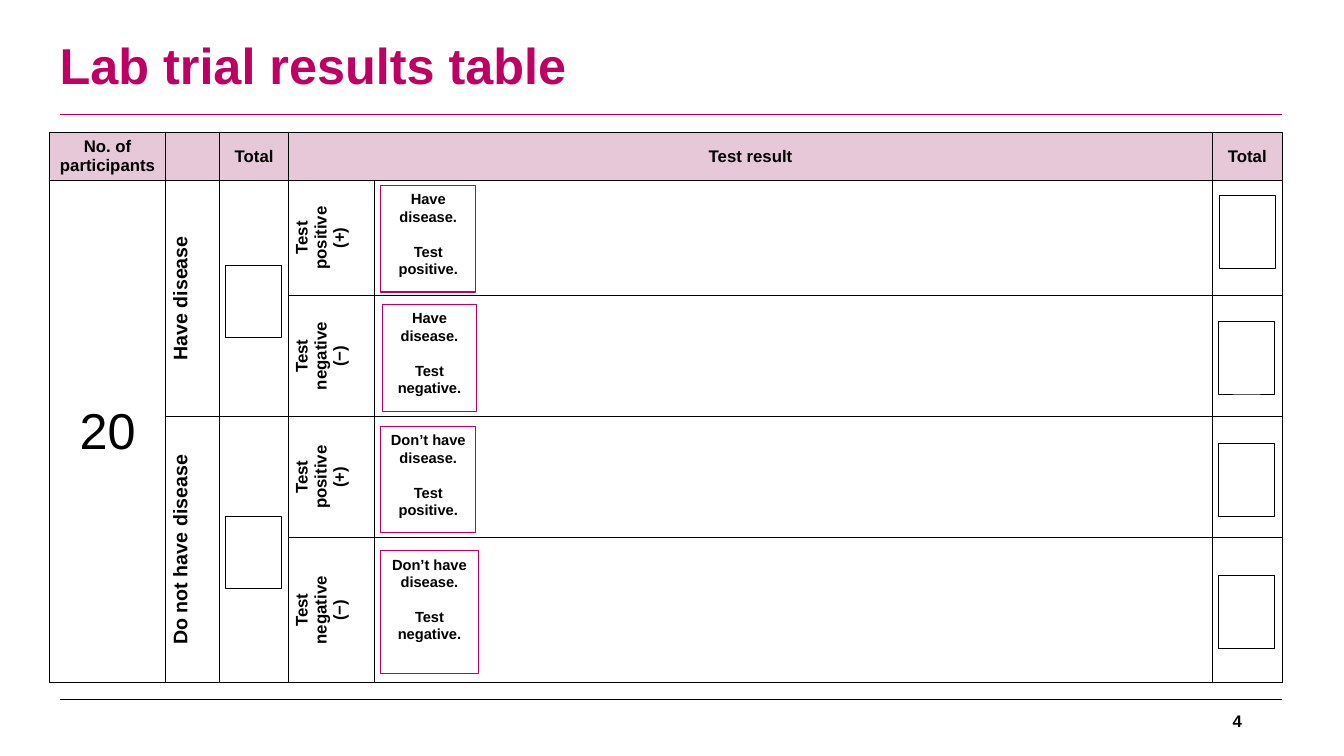
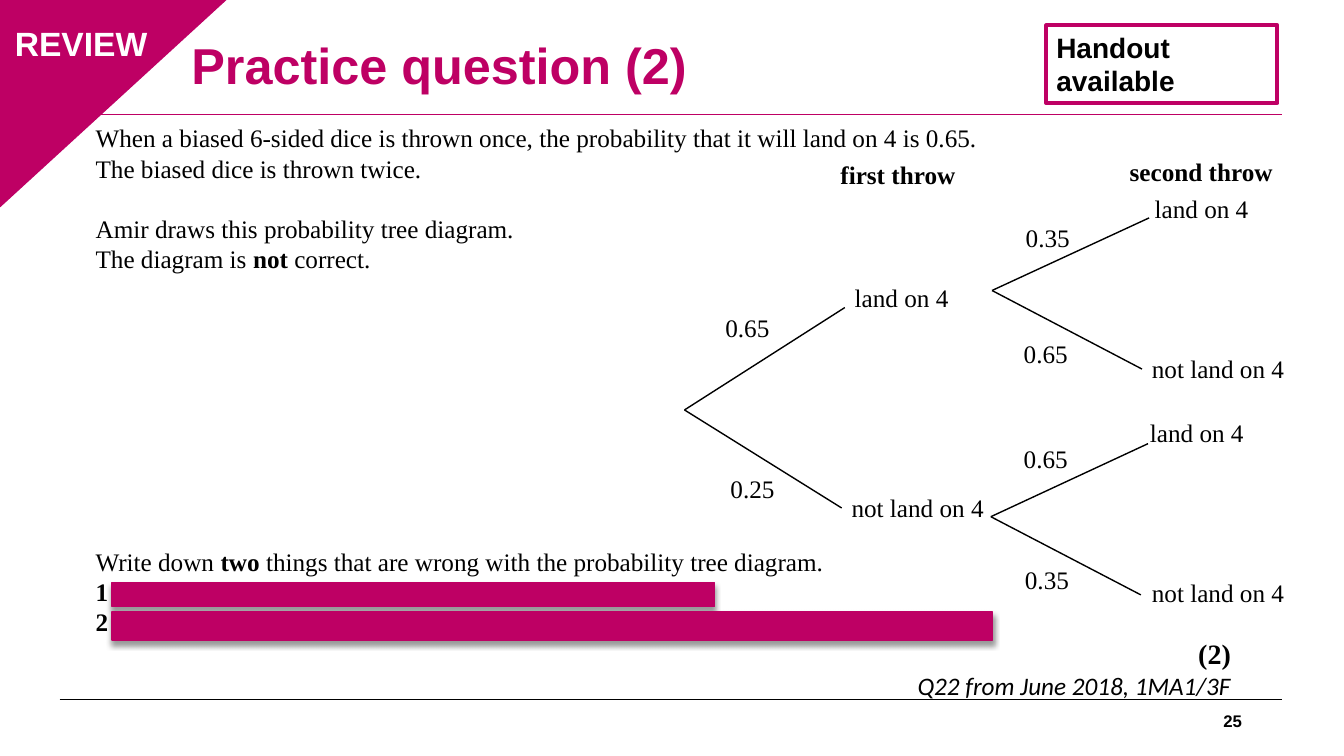
from dataclasses import dataclass

from lxml import etree
from pptx import Presentation
from pptx.dml.color import RGBColor
from pptx.enum.shapes import MSO_CONNECTOR, MSO_SHAPE
from pptx.enum.text import MSO_ANCHOR, PP_ALIGN
from pptx.oxml.ns import qn
from pptx.util import Cm, Pt

MAGENTA = RGBColor(0xBE, 0x00, 0x64)
PINK = RGBColor(0xE6, 0xC8, 0xD9)
BLACK = RGBColor(0, 0, 0)
WHITE = RGBColor(255, 255, 255)
SANS, SERIF, SOURCE_FONT = "Arial", "Times New Roman", "Calibri"

LEFT, CENTER, RIGHT = PP_ALIGN.LEFT, PP_ALIGN.CENTER, PP_ALIGN.RIGHT
TOP, MIDDLE = MSO_ANCHOR.TOP, MSO_ANCHOR.MIDDLE
RECTANGLE, TRIANGLE = MSO_SHAPE.RECTANGLE, MSO_SHAPE.ISOSCELES_TRIANGLE
STRAIGHT = MSO_CONNECTOR.STRAIGHT

TITLE_ONLY = 5
BODY_LINE = 21.6
NOTE_GAP = 12.1
TICK_SIZE = (1.4, 1.83)
OUTCOME_WIDTHS = {"land on 4": 2.9, "not land on 4": 3.89}


@dataclass(frozen=True)
class Note:
    at: tuple[float, float, float, float]
    status: str
    result: str


@dataclass(frozen=True)
class Branch:
    start: tuple[float, float]
    end: tuple[float, float]
    outcome: str
    outcome_at: tuple[float, float]
    probability: str
    probability_at: tuple[float, float]


NOTES = [
    Note((9.6, 4.67, 2.39, 2.69), "Have disease.", "Test positive."),
    Note((9.63, 7.67, 2.39, 2.69), "Have disease.", "Test negative."),
    Note((9.6, 10.74, 2.39, 2.69), "Don’t have disease.", "Test positive."),
    Note((9.58, 13.87, 2.49, 3.1), "Don’t have disease.", "Test negative."),
]
TICK_BOXES = [(5.69, 6.68), (5.69, 13), (30.73, 4.93), (30.71, 8.1),
              (30.71, 11.18), (30.71, 14.5)]
BRANCHES = [
    Branch((17.25, 10.33), (21.29, 7.75), "land on 4", (21.29, 6.99),
           "0.65", (18.03, 7.75)),
    Branch((17.25, 10.33), (21.21, 12.8), "not land on 4", (21.21, 12.29),
           "0.25", (18.16, 11.79)),
    Branch((25, 7.32), (28.96, 5.49), "land on 4", (28.85, 4.75),
           "0.35", (25.6, 5.49)),
    Branch((25, 7.32), (28.78, 9.3), "not land on 4", (28.78, 8.79),
           "0.65", (25.55, 8.41)),
    Branch((24.97, 13.02), (28.93, 11.18), "land on 4", (28.73, 10.39),
           "0.65", (25.55, 11.05)),
    Branch((24.97, 13.02), (28.75, 14.99), "not land on 4", (28.78, 14.43),
           "0.35", (25.58, 14.1)),
]


# Drawing helpers
def write(frame, *lines: str, size=18, font=SANS, color=BLACK, bold=False,
          italic=False, align=LEFT, before=0, spacing=None) -> None:
    """Append one paragraph per line; text between asterisks is bold."""
    for line in lines:
        paragraph = frame.add_paragraph() if frame.text else frame.paragraphs[0]
        paragraph.alignment = align
        paragraph.space_before = Pt(before)
        if spacing is not None:
            paragraph.line_spacing = spacing
        for index, piece in enumerate(line.split("*")):
            if not piece:
                continue
            run = paragraph.add_run()
            run.text = piece
            run.font.size = Pt(size)
            run.font.name = font
            run.font.bold = bold or index % 2 == 1
            run.font.italic = italic
            run.font.color.rgb = color


def add_text(slide, at, *lines: str, anchor=TOP, wrap=True, **style):
    frame = slide.shapes.add_textbox(*map(Cm, at)).text_frame
    frame.word_wrap = wrap
    frame.vertical_anchor = anchor
    write(frame, *lines, **style)
    return frame


def add_box(slide, at, kind=RECTANGLE, fill=None, line=MAGENTA, width=1.0):
    box = slide.shapes.add_shape(kind, *map(Cm, at))
    box.shadow.inherit = False
    if fill is None:
        box.fill.background()
    else:
        box.fill.solid()
        box.fill.fore_color.rgb = fill
    box.line.color.rgb = line
    box.line.width = Pt(width)
    box.text_frame.word_wrap = True
    box.text_frame.vertical_anchor = TOP
    return box


def add_line(slide, start, end, color=BLACK, width=1.0) -> None:
    line = slide.shapes.add_connector(STRAIGHT, *map(Cm, (*start, *end)))
    line.line.color.rgb = color
    line.line.width = Pt(width)
    etree.SubElement(line.element.spPr, qn("a:effectLst"))


def add_color(parent, color: RGBColor):
    return etree.SubElement(parent, qn("a:srgbClr"), val=str(color))


def add_drop_shadow(box) -> None:
    effects = box.element.spPr.find(qn("a:effectLst"))
    shadow = etree.SubElement(
        effects, qn("a:outerShdw"), blurRad=str(Pt(4)), dist=str(Pt(3)),
        dir="5400000", rotWithShape="0")
    etree.SubElement(add_color(shadow, BLACK), qn("a:alpha"), val="40000")


def format_cell(cell, fill: RGBColor) -> None:
    cell.fill.solid()
    cell.fill.fore_color.rgb = fill
    cell.vertical_anchor = MIDDLE
    cell.margin_left = cell.margin_right = Cm(0.19)
    cell.margin_top = cell.margin_bottom = Cm(0.1)
    properties = cell._tc.get_or_add_tcPr()
    for index, side in enumerate(("a:lnL", "a:lnR", "a:lnT", "a:lnB")):
        border = etree.Element(qn(side), w=str(Pt(1)))
        add_color(etree.SubElement(border, qn("a:solidFill")), BLACK)
        properties.insert(index, border)


def write_upward(cell, *lines: str, size: int) -> None:
    cell._tc.get_or_add_tcPr().set("vert", "vert270")
    write(cell.text_frame, *lines, size=size, bold=True, align=CENTER)


# Shared frame: rules, title and page number
def start_slide(deck, heading: str, number: int, title_left: float, title_width: float):
    slide = deck.slides.add_slide(deck.slide_layouts[TITLE_ONLY])
    add_line(slide, (1.5, 17.63), (32.3, 17.63), width=0.75)
    add_line(slide, (1.5, 2.89), (32.3, 2.89), MAGENTA, 0.75)
    title = slide.shapes.title
    title.left, title.top = Cm(title_left), Cm(0.3)
    title.width, title.height = Cm(title_width), Cm(2.82)
    title.text_frame.vertical_anchor = MIDDLE
    write(title.text_frame, heading, size=36, color=MAGENTA, bold=True, spacing=0.9)
    add_text(slide, (23.93, 17.65, 7.62, 1.02), str(number), anchor=MIDDLE,
             size=12, bold=True, align=RIGHT)
    return slide


def build_results_slide(deck) -> None:
    slide = start_slide(deck, "Lab trial results table", 4, 1.25, 25.4)

    # Results table
    columns = (2.92, 1.37, 1.73, 2.16, 21.13, 1.75)
    rows = (1.2, 2.9, 3.05, 3.05, 3.66)
    table = slide.shapes.add_table(
        len(rows), len(columns), Cm(1.25), Cm(3.33),
        Cm(sum(columns)), Cm(sum(rows))).table
    table.first_row = table.horz_banding = False
    for column, width in zip(table.columns, columns):
        column.width = Cm(width)
    for index, (row, height) in enumerate(zip(table.rows, rows)):
        row.height = Cm(height)
        for cell in row.cells:
            format_cell(cell, WHITE if index else PINK)

    spans = [((0, 3), (0, 4)), ((1, 0), (4, 0))]
    spans += [((top, col), (top + 1, col)) for top in (1, 3) for col in (1, 2)]
    for first, last in spans:
        table.cell(*first).merge(table.cell(*last))

    headers = {0: "No. of participants", 2: "Total", 3: "Test result", 5: "Total"}
    for col, header in headers.items():
        write(table.cell(0, col).text_frame, header, size=12, bold=True, align=CENTER)
    write(table.cell(1, 0).text_frame, "20", size=36, align=CENTER)
    for top, status in ((1, "Have disease"), (3, "Do not have disease")):
        write_upward(table.cell(top, 1), status, size=14)
        write_upward(table.cell(top, 3), "Test", "positive", "(+)", size=12)
        write_upward(table.cell(top + 1, 3), "Test", "negative", "(−)", size=12)

    # Outcome notes and boxes for the totals
    for note in NOTES:
        frame = add_box(slide, note.at, width=0.75).text_frame
        frame.margin_left = frame.margin_right = Cm(0.15)
        write(frame, note.status, size=10.5, bold=True, align=CENTER)
        write(frame, note.result, size=10.5, bold=True, align=CENTER, before=NOTE_GAP)
    for corner in TICK_BOXES:
        add_box(slide, (*corner, *TICK_SIZE), line=BLACK, width=0.5)


def build_practice_slide(deck) -> None:
    slide = start_slide(deck, "Practice question (2)", 25, 4.57, 22.07)

    # Review corner and handout tag
    corner = add_box(slide, (-0.08, -0.05, 5.82, 5.33), TRIANGLE, fill=MAGENTA)
    corner.adjustments[0] = 0
    corner.element.spPr.get_or_add_xfrm().set("flipV", "1")
    add_text(slide, (-0.05, 0.46, 4.19, 1.27), "REVIEW", size=24, color=WHITE,
             bold=True, align=CENTER)
    handout = add_box(slide, (26.37, 0.64, 5.82, 1.96), width=3)
    write(handout.text_frame, "Handout available", size=20, bold=True)

    # Question with two numbered answer lines
    body = {"font": SERIF, "spacing": Pt(BODY_LINE)}
    question = add_text(
        slide, (2.16, 2.97, 29.11, 14.96),
        "When a biased 6-sided dice is thrown once, the probability that it "
        "will land on 4 is 0.65.",
        "The biased dice is thrown twice.", **body)
    write(question, "Amir draws this probability tree diagram.",
          before=BODY_LINE, **body)
    write(question, "The diagram is *not* correct.", **body)
    write(question, "Write down *two* things that are wrong with the probability "
          "tree diagram.", before=9 * BODY_LINE, **body)
    write(question, "1", "2", bold=True, **body)
    write(question, "(2)", size=20, font=SERIF, bold=True, align=RIGHT)
    write(question, "Q22 from June 2018, 1MA1/3F", font=SOURCE_FONT,
          italic=True, align=RIGHT)

    # Probability tree
    for throw, at in (("first throw", (20.93, 3.89, 3.43, 1.02)),
                      ("second throw", (28.22, 3.81, 4.27, 1.02))):
        add_text(slide, at, throw, wrap=False, font=SERIF, bold=True)
    for branch in BRANCHES:
        add_line(slide, branch.start, branch.end)
        add_text(slide, (*branch.outcome_at, OUTCOME_WIDTHS[branch.outcome], 1.02),
                 branch.outcome, wrap=False, font=SERIF)
        add_text(slide, (*branch.probability_at, 1.63, 1.02),
                 branch.probability, wrap=False, font=SERIF)

    # Answer bars
    for bar in ((2.82, 14.68, 15.19, 0.61), (2.82, 15.42, 22.2, 0.71)):
        add_drop_shadow(add_box(slide, bar, fill=MAGENTA))


def main() -> None:
    deck = Presentation()
    deck.slide_width, deck.slide_height = Cm(33.87), Cm(19.05)
    build_results_slide(deck)
    build_practice_slide(deck)
    deck.save("out.pptx")


if __name__ == "__main__":
    main()
